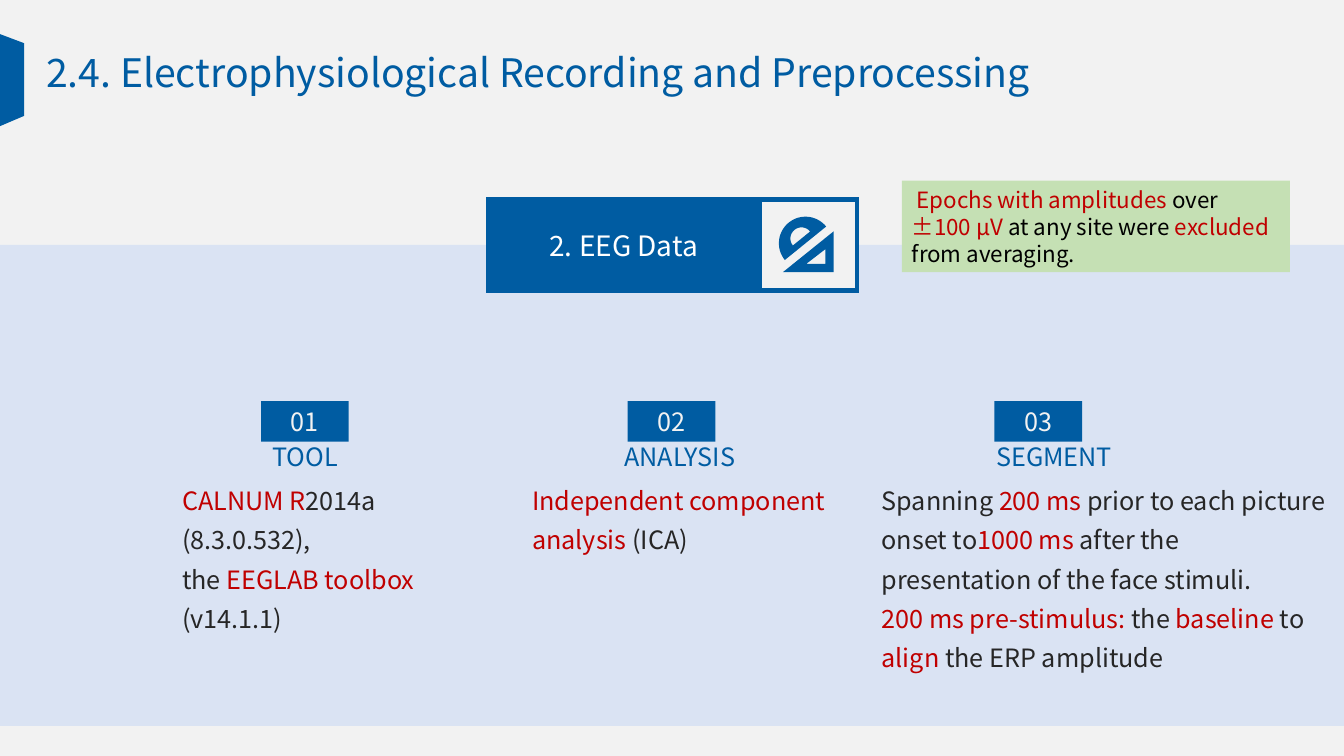
from math import cos, radians, sin

from lxml.etree import SubElement
from pptx import Presentation
from pptx.dml.color import RGBColor
from pptx.enum.shapes import MSO_SHAPE as Preset
from pptx.enum.text import MSO_ANCHOR as Anchor, MSO_AUTO_SIZE as AutoSize, PP_ALIGN as Align
from pptx.oxml.ns import qn
from pptx.util import Cm, Pt

FONT = "Noto Sans CJK SC"
BLUE, PALE, BAND, GREEN = "005CA2", "F2F2F2", "DAE3F3", "C5E0B4"
RED, DARK, BLACK, WHITE = "C00000", "262626", "000000", "FFFFFF"

BADGE_LEFT, BADGE_STEP = 6.58, 9.24
STEPS = [
    ("TOOL", 6.17, 3.05, 4.34, 6.86,
     ["*CALNUM R*2014a (8.3.0.532),", "the *EEGLAB toolbox* (v14.1.1)"]),
    ("ANALYSIS", 15.11, 4.04, 13.16, 8.84,
     ["*Independent component analysis* (ICA)"]),
    ("SEGMENT", 24.66, 3.81, 21.97, 11.89,
     ["Spanning *200 ms* prior to each picture onset to*1000 ms* after the "
      "presentation of the face stimuli.",
      "*200 ms pre-stimulus:* the *baseline* to *align* the ERP amplitude"]),
]


def rgb(colour):
    return RGBColor.from_string(colour)


def paint(shape, fill, line=None):
    shape.shadow.inherit = False
    shape.fill.solid()
    shape.fill.fore_color.rgb = rgb(fill)
    if line:
        shape.line.color.rgb = rgb(line)
        shape.line.width = Pt(3)
        stroke = shape.element.spPr.find(qn("a:ln"))
        SubElement(stroke, qn("a:miter"), lim="800000")
    else:
        shape.line.fill.background()


def add_rect(slide, left, top, width, height, fill, line=None):
    rect = slide.shapes.add_shape(Preset.RECTANGLE, Cm(left), Cm(top), Cm(width), Cm(height))
    paint(rect, fill, line)
    return rect


def add_outline(slide, *contours):
    first, *others = [[(Cm(x), Cm(y)) for x, y in contour] for contour in contours]
    builder = slide.shapes.build_freeform(*first[0])
    builder.add_line_segments(first[1:])
    for contour in others:
        builder.move_to(*contour[0])
        builder.add_line_segments(contour[1:])
    paint(builder.convert_to_shape(), BLUE)


def write(shape, paragraphs, size, colour, align=Align.LEFT, anchor=Anchor.TOP, spacing=None):
    frame = shape.text_frame
    frame.word_wrap = True
    frame.auto_size = AutoSize.NONE
    frame.vertical_anchor = anchor
    for index, marked in enumerate(paragraphs):
        paragraph = frame.add_paragraph() if index else frame.paragraphs[0]
        paragraph.alignment = align
        paragraph.line_spacing = spacing
        paragraph.font.name = FONT
        paragraph.font.size = Pt(size)
        paragraph.font.color.rgb = rgb(colour)
        for part, words in enumerate(marked.split("*")):
            if words:
                run = paragraph.add_run()
                run.text = words
                if part % 2:
                    run.font.color.rgb = rgb(RED)


def add_text(slide, left, top, width, height, paragraphs, size, colour, **layout):
    box = slide.shapes.add_textbox(Cm(left), Cm(top), Cm(width), Cm(height))
    write(box, paragraphs, size, colour, **layout)


def add_title(slide, words):
    title = slide.shapes.title
    title.left, title.top, title.width, title.height = Cm(0.91), Cm(1.09), Cm(26.19), Cm(1.45)
    write(title, [words], 28, BLUE)
    title.text_frame.word_wrap = False


def half_disc(x, y, radius):
    angles = [radians(-39 - 6 * step) for step in range(31)]
    return [(x + radius * cos(angle), y + radius * sin(angle)) for angle in angles]


def add_drafting_icon(slide):
    add_outline(slide, half_disc(20.3, 6.13, 0.67), half_disc(20.2, 6.01, 0.28)[::-1])
    add_outline(slide,
                [(21.01, 5.83), (19.73, 6.86), (21.01, 6.86)],
                [(20.8, 6.28), (20.8, 6.65), (20.32, 6.65)])


def add_step(slide, index, heading, heading_left, heading_width, left, width, details):
    add_text(slide, heading_left, 11, heading_width, 1.02, [heading], 18, BLUE,
             align=Align.CENTER)
    add_text(slide, left, 11.88, width, 5.26, details, 18, DARK, spacing=1.3)
    badge = add_rect(slide, BADGE_LEFT + index * BADGE_STEP, 10.11, 2.21, 1.02, BLUE)
    write(badge, [f"{index + 1:02}"], 18, PALE, align=Align.CENTER, anchor=Anchor.MIDDLE)


def main():
    deck = Presentation()
    deck.slide_width, deck.slide_height = Cm(33.87), Cm(19.05)
    slide = deck.slides.add_slide(deck.slide_layouts[5])
    slide.background.fill.solid()
    slide.background.fill.fore_color.rgb = rgb(PALE)

    add_outline(slide, [(0, 0.86), (0.61, 1.09), (0.61, 2.92), (0, 3.18)])
    add_title(slide, "2.4. Electrophysiological Recording and Preprocessing")
    add_rect(slide, 0, 6.17, 33.87, 12.12, BAND)

    add_rect(slide, 12.29, 5.03, 9.3, 2.29, BLUE, BLUE)
    add_rect(slide, 19.15, 5.03, 2.44, 2.29, PALE, BLUE)
    add_text(slide, 12.29, 5.64, 6.86, 1.12, ["2. EEG Data"], 20, WHITE, align=Align.CENTER)
    add_drafting_icon(slide)

    for index, step in enumerate(STEPS):
        add_step(slide, index, *step)

    note = add_rect(slide, 22.73, 4.55, 9.78, 2.31, GREEN)
    write(note, [" *Epochs with amplitudes *over *±100 µV* at any site were *excluded* from averaging."],
          16, BLACK, anchor=Anchor.MIDDLE)

    deck.save("out.pptx")


if __name__ == "__main__":
    main()
